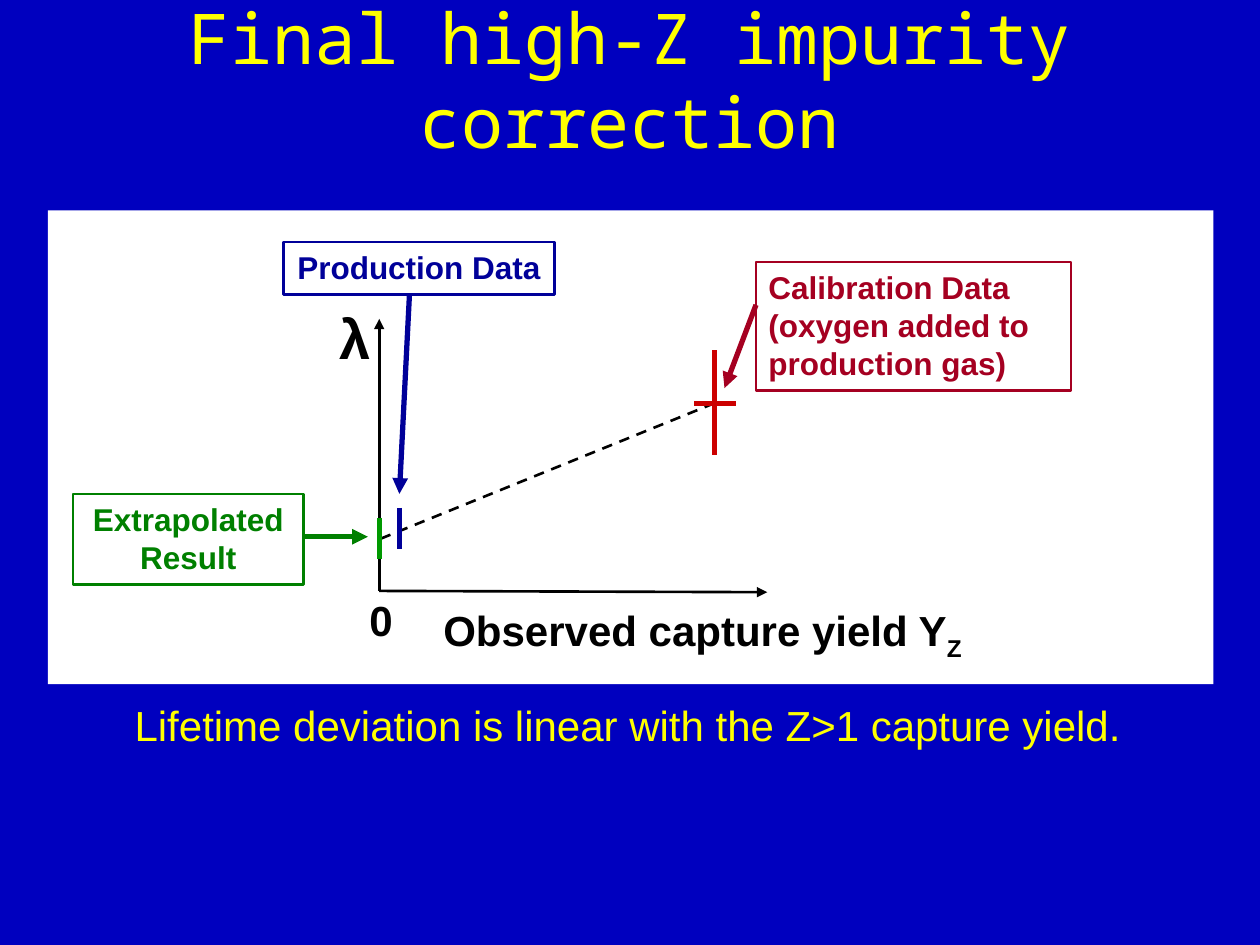
"""Build the slide on the final high-Z impurity correction."""
from lxml.etree import SubElement
from pptx import Presentation
from pptx.dml.color import RGBColor
from pptx.enum.dml import MSO_LINE_DASH_STYLE as Dash
from pptx.enum.shapes import MSO_CONNECTOR as Connector, MSO_SHAPE as Shape
from pptx.enum.text import MSO_ANCHOR as Anchor, MSO_AUTO_SIZE as AutoSize, PP_ALIGN as Align
from pptx.oxml.ns import qn
from pptx.util import Inches, Pt

BLACK, WHITE, YELLOW = "000000", "FFFFFF", "FFFF00"
NAVY, RED, CRIMSON, GREEN, LIME = "000099", "CC0000", "A50021", "008000", "009900"

TITLE = "Final high-Z impurity correction"
BACKGROUND = "0000BF"
PANEL = (0.38, 1.67, 9.25, 3.76)
ORIGIN = (3.01, 4.69)
CALIBRATION = (5.67, 3.2)

AXES = [(ORIGIN, (6.09, 4.7)), (ORIGIN, (3.01, 2.53))]
EXTRAPOLATION = (CALIBRATION, (3.01, 4.28))
ERROR_BARS = [
    ((3.17, 4.03), (3.17, 4.36), NAVY),
    ((5.67, 2.78), (5.67, 3.61), RED),
    ((5.51, 3.2), (5.84, 3.2), RED),
    ((3.01, 4.11), (3.01, 4.44), LIME),
]
POINTERS = [
    ((3.25, 2.33), (3.17, 3.92), NAVY),
    ((6, 2.42), (5.75, 3.08), CRIMSON),
    ((2.42, 4.26), (2.92, 4.26), GREEN),
]
CALLOUTS = [
    ((2.25, 1.92, 2.15, 0.42), ["Production Data"], NAVY, Align.CENTER, False),
    ((6, 2.08, 2.5, 1.02), ["Calibration Data", "(oxygen added to production gas)"],
     CRIMSON, Align.LEFT, True),
    ((0.58, 3.92, 1.83, 0.72), ["Extrapolated", "Result"], GREEN, Align.CENTER, True),
]
LABELS = [
    ((2.59, 2.36, 0.45, 0.63), "λ", 32, BLACK, True, Align.CENTER, False),
    ((2.83, 4.67, 0.39, 0.5), "0", 24, BLACK, True, Align.CENTER, False),
    ((3.42, 4.75, 4.42, 0.5), "Observed capture yield Y", 24, BLACK, True, Align.LEFT, True),
    ((0.97, 5.5, 8.03, 0.5), "Lifetime deviation is linear with the Z>1 capture yield.",
     24, YELLOW, False, Align.LEFT, False),
]
SUBSCRIPT = "Z"


def paint(color_format, color):
    color_format.rgb = RGBColor.from_string(color)


def write(frame, lines, size, color, bold=False, align=Align.LEFT, wrap=True,
          font="Arial", anchor=Anchor.TOP):
    frame.word_wrap = wrap
    frame.auto_size = AutoSize.NONE
    frame.vertical_anchor = anchor
    frame.text = "\n".join(lines)
    for paragraph in frame.paragraphs:
        paragraph.alignment = align
        paragraph.font.name, paragraph.font.size = font, Pt(size)
        paragraph.font.bold = bold
        paint(paragraph.font.color, color)


def draw_line(slide, start, end, color, width, arrow=False, dashed=False):
    line = slide.shapes.add_connector(Connector.STRAIGHT, *map(Inches, start + end))
    line.line.width = Pt(width)
    paint(line.line.color, color)
    if dashed:
        line.line.dash_style = Dash.DASH
    if arrow:
        SubElement(line.line._get_or_add_ln(), qn("a:tailEnd"), type="triangle")
    SubElement(line._element.spPr, qn("a:effectLst"))


def draw_box(slide, place, fill=None, border=None):
    box = slide.shapes.add_shape(Shape.RECTANGLE, *map(Inches, place))
    box.shadow.inherit = False
    if fill:
        box.fill.solid()
        paint(box.fill.fore_color, fill)
    else:
        box.fill.background()
    if border:
        box.line.width = Pt(1.5)
        paint(box.line.color, border)
    else:
        box.line.fill.background()
    return box


def main():
    deck = Presentation()
    deck.slide_width, deck.slide_height = Inches(10), Inches(7.5)
    slide = deck.slides.add_slide(deck.slide_layouts[5])
    slide.background.fill.solid()
    paint(slide.background.fill.fore_color, BACKGROUND)

    title = slide.shapes.title
    title.left, title.top, title.width, title.height = map(Inches, (0.33, 0, 9.33, 1.25))
    write(title.text_frame, [TITLE], 40, YELLOW, align=Align.CENTER,
          font="Noto Sans Mono", anchor=Anchor.MIDDLE)

    draw_box(slide, PANEL, fill=WHITE)
    for start, end in AXES:
        draw_line(slide, start, end, BLACK, 1.5, arrow=True)
    draw_line(slide, *EXTRAPOLATION, BLACK, 1.5, dashed=True)
    for start, end, color in ERROR_BARS:
        draw_line(slide, start, end, color, 3)
    for place, lines, color, align, wrap in CALLOUTS:
        callout = draw_box(slide, place, border=color)
        write(callout.text_frame, lines, 18, color, True, align, wrap)
    for start, end, color in POINTERS:
        draw_line(slide, start, end, color, 3, arrow=True)

    for place, text, size, color, bold, align, wrap in LABELS:
        label = slide.shapes.add_textbox(*map(Inches, place)).text_frame
        write(label, [text], size, color, bold, align, wrap)
        if text.endswith("Y"):
            subscript = label.paragraphs[0].add_run()
            subscript.text = SUBSCRIPT
            subscript.font._element.set("baseline", "-25000")

    deck.save("out.pptx")


if __name__ == "__main__":
    main()
